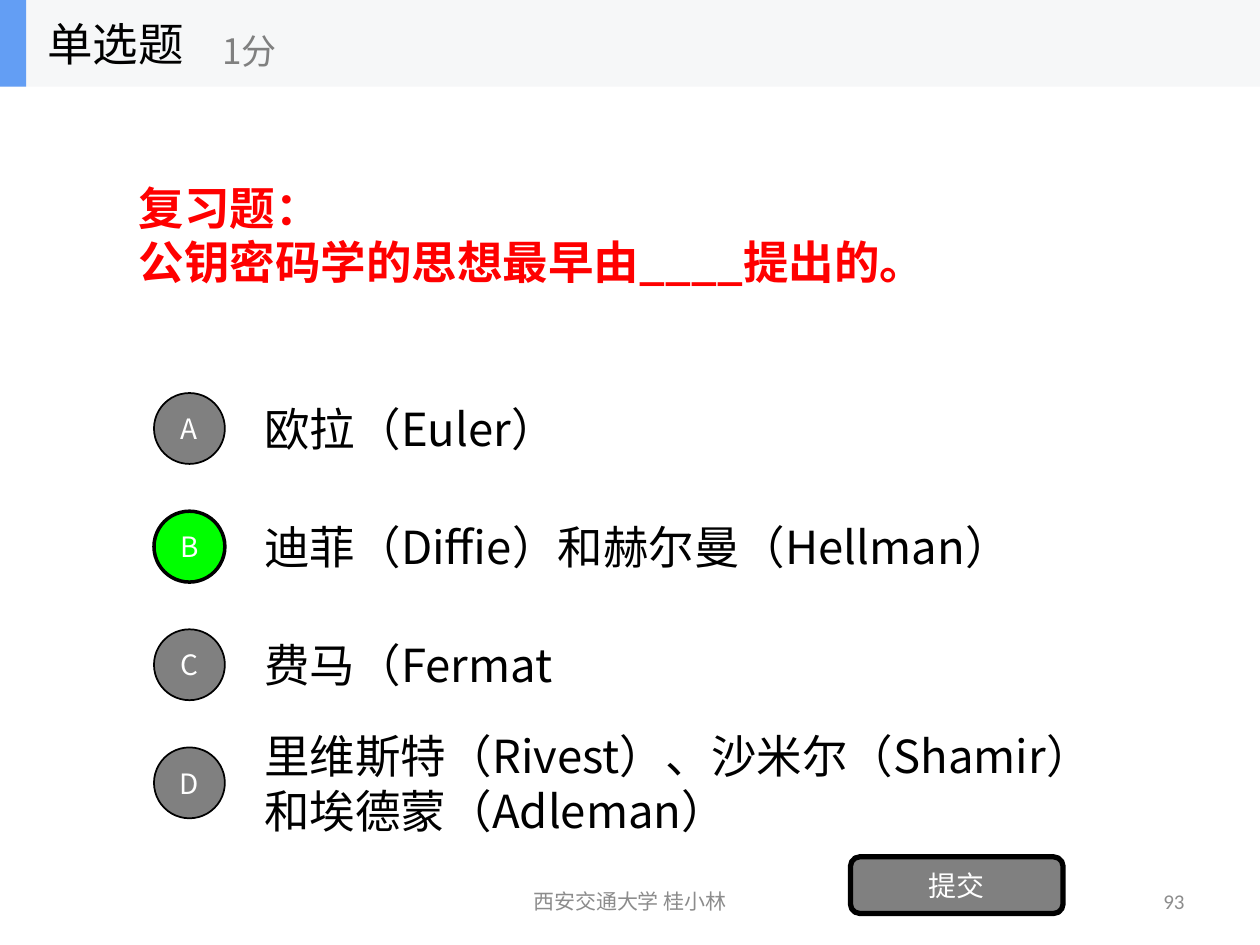
from pptx import Presentation
from pptx.util import Pt
from pptx.dml.color import RGBColor as RGB
from pptx.enum.shapes import MSO_SHAPE as Kind
from pptx.enum.text import MSO_ANCHOR as Anchor, MSO_AUTO_SIZE as Auto, PP_ALIGN as Align
from lxml.etree import SubElement
from pptx.oxml.ns import qn

INK = {"black": "000000", "white": "FFFFFF", "red": "FF0000", "gray": "808080",
       "pale": "8C8C8C", "green": "00FF00", "bar": "F6F7F8", "blue": "639EF4"}
SANS = "Noto Sans CJK SC"
QUIZ = [("A", "欧拉（Euler）"),
        ("B", "迪菲（Diffie）和赫尔曼（Hellman）"),
        ("C", "费马（Fermat"),
        ("D", "里维斯特（Rivest）、沙米尔（Shamir）和埃德蒙（Adleman）")]
RIGHT = "B"


def write(shape, text, size, ink="black", align=Align.LEFT, face=SANS, bold=False):
    frame = shape.text_frame
    look = {"word_wrap": True, "auto_size": Auto.NONE, "vertical_anchor": Anchor.MIDDLE}
    for key, val in look.items():
        setattr(frame, key, val)
    frame.text = text
    for para in frame.paragraphs:
        para.alignment = align
        for run in para.runs:
            for key, val in {"size": Pt(size), "name": face, "bold": bold}.items():
                setattr(run.font, key, val)
            run.font.color.rgb = RGB.from_string(INK[ink])
            # East Asian typeface
            SubElement(run.font._element, qn("a:ea"), typeface=SANS)


def label(shapes, box, text, size, **look):
    write(shapes.add_textbox(*map(Pt, box)), text, size, **look)


def block(shapes, kind, box, fill, line=0):
    shape = shapes.add_shape(kind, *map(Pt, box))
    shape.shadow.inherit = False
    shape.fill.solid()
    shape.fill.fore_color.rgb = RGB.from_string(INK[fill])
    if line:
        shape.line.color.rgb = RGB.from_string(INK["black"])
        shape.line.width = Pt(line)
    else:
        shape.line.fill.background()
    return shape


def footer(shapes, box):
    x, y, w, h = box
    label(shapes, (x, y, 228, h), "西安交通大学 桂小林", 12,
          ink="pale", align=Align.CENTER, face="Calibri")
    label(shapes, (x + w - 168, y, 168, h), "93", 12,
          ink="pale", align=Align.RIGHT, face="Calibri")


def question(title, box):
    for key, val in zip(("left", "top", "width", "height"), box):
        setattr(title, key, Pt(val))
    write(title, "复习题：\n公钥密码学的思想最早由____提出的。", 26, ink="red", bold=True)


def choices(shapes, box):
    x, y, w, h = box
    step = h / len(QUIZ)
    for i, (mark, text) in enumerate(QUIZ):
        top = y + i * step
        label(shapes, (x + 56, top, w - 56, 50.4), text, 26)
        hit = mark == RIGHT
        dot = block(shapes, Kind.OVAL, (x, top + 5, 40.5, 40.5),
                    "green" if hit else "gray", 2 if hit else 1)
        write(dot, mark, 16, ink="white", align=Align.CENTER)


def submit(shapes, box):
    key = block(shapes, Kind.ROUNDED_RECTANGLE, box, "gray", 3)
    write(key, "提交", 16, ink="white", align=Align.CENTER)


def header(shapes, box):
    x, y, w, h = box
    group = shapes.add_group_shape().shapes
    block(group, Kind.RECTANGLE, box, "bar")
    block(group, Kind.RECTANGLE, (x, y, 15, h), "blue")
    label(group, (x + 20, y, 150, h), "单选题", 26)
    label(group, (x + 120, y + 9, 180, 40), "1分", 20, ink="gray")


def main():
    deck = Presentation()
    deck.slide_width, deck.slide_height = Pt(720), Pt(540)
    slide = deck.slides.add_slide(deck.slide_layouts[5])
    shapes = slide.shapes
    # Question and answers
    question(shapes.title, (72, 50, 576, 168))
    choices(shapes, (88, 219.6, 560, 270))
    # Frame of the slide
    footer(shapes, (246, 500.5, 438, 29))
    submit(shapes, (486, 489.6, 121.5, 32.4))
    header(shapes, (0, 0, 720, 49.5))
    deck.save("out.pptx")


if __name__ == "__main__":
    main()
